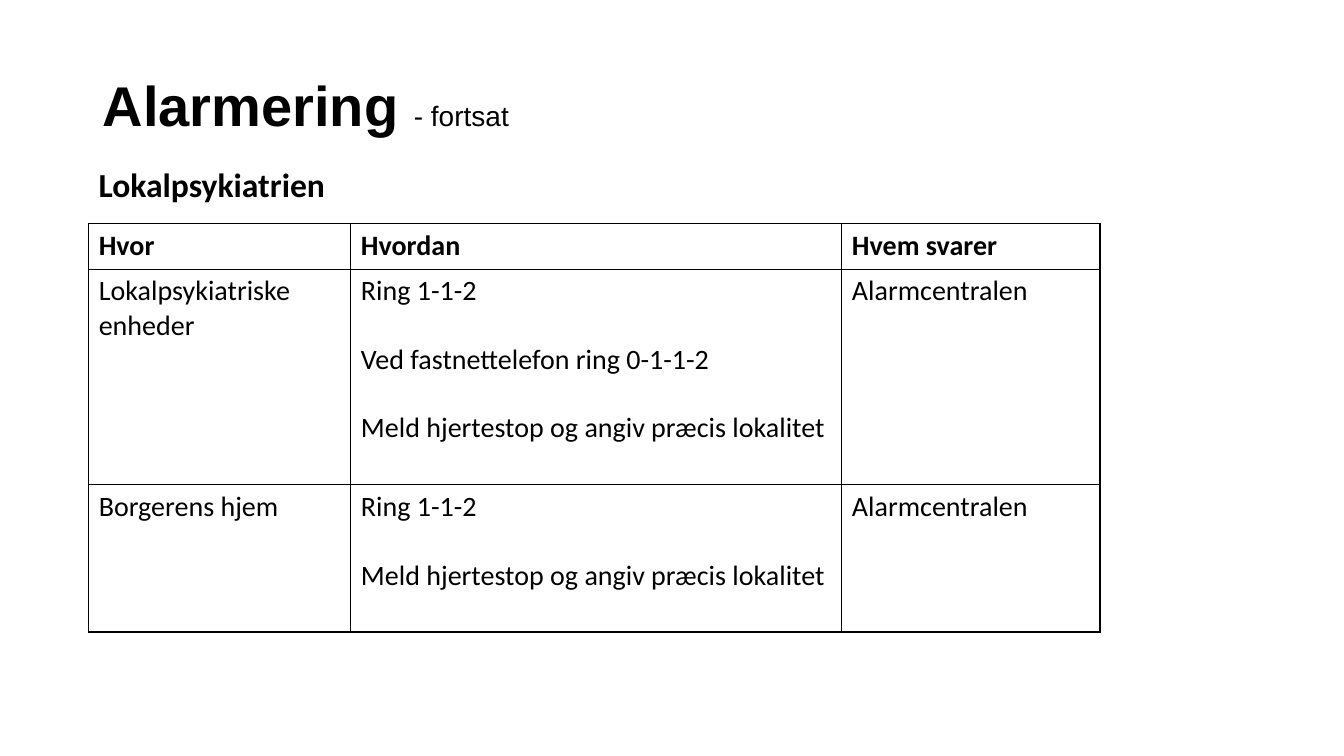
from dataclasses import dataclass

from lxml.etree import SubElement as Sub
from pptx import Presentation as Deck
from pptx.dml.color import RGBColor as Rgb
from pptx.enum.text import MSO_ANCHOR as Anchor, MSO_AUTO_SIZE as Auto, PP_ALIGN as Align
from pptx.oxml.ns import qn
from pptx.util import Inches, Pt

COLORS = {"ink": "000000", "paper": "FFFFFF"}
HEAD, BODY = "Arial", "Calibri"
GAP = 24.4  # one line of 20 pt text
WIDTHS = [2.6, 4.87, 2.56]
EDGES = ["a:lnL", "a:lnR", "a:lnT", "a:lnB"]


@dataclass
class Row:
    high: float
    cells: list[list[str]]
    bold: bool = False


ROWS = [
    Row(0.45, [["Hvor"], ["Hvordan"], ["Hvem svarer"]], True),
    Row(2.14, [
        ["Lokalpsykiatriske enheder"],
        ["Ring 1-1-2", "Ved fastnettelefon ring 0-1-1-2",
         "Meld hjertestop og angiv præcis lokalitet"],
        ["Alarmcentralen"],
    ]),
    Row(1.46, [
        ["Borgerens hjem"],
        ["Ring 1-1-2", "Meld hjertestop og angiv præcis lokalitet"],
        ["Alarmcentralen"],
    ]),
]


def add_run(para, text: str, size: float, face: str, bold: bool = False) -> None:
    run = para.add_run()
    run.text = text
    font = run.font
    font.size, font.name, font.bold = Pt(size), face, bold
    font.color.rgb = Rgb.from_string(COLORS["ink"])


def add_edges(cell) -> None:
    props = cell._tc.get_or_add_tcPr()
    for spot, edge in enumerate(EDGES):
        line = Sub(props, qn(edge), w=str(Pt(1)))
        fill = Sub(line, qn("a:solidFill"))
        Sub(fill, qn("a:srgbClr"), val=COLORS["ink"])
        props.remove(line)
        props.insert(spot, line)  # edges come before the fill


def fill_cell(cell, lines: list[str], bold: bool) -> None:
    cell.fill.solid()
    cell.fill.fore_color.rgb = Rgb.from_string(COLORS["paper"])
    add_edges(cell)
    frame = cell.text_frame
    for num, text in enumerate(lines):
        para = frame.add_paragraph() if num else frame.paragraphs[0]
        if num:
            para.space_before = Pt(GAP)
        add_run(para, text, 20, BODY, bold)


def add_title(slide) -> None:
    title = slide.shapes.title
    title.left, title.top = Inches(0.92), Inches(0.71)
    title.width, title.height = Inches(8.97), Inches(0.73)
    frame = title.text_frame
    frame.auto_size = Auto.NONE
    frame.vertical_anchor = Anchor.MIDDLE
    para = frame.paragraphs[0]
    para.alignment, para.line_spacing = Align.LEFT, 0.9
    add_run(para, "Alarmering ", 40, HEAD, True)
    add_run(para, "- fortsat", 20, HEAD)


def add_grid(slide) -> None:
    high = sum(row.high for row in ROWS)
    grid = slide.shapes.add_table(
        len(ROWS), len(WIDTHS), Inches(0.88), Inches(2.22),
        Inches(sum(WIDTHS)), Inches(high)).table
    grid.first_row = grid.horz_banding = False
    for col, wide in zip(grid.columns, WIDTHS):
        col.width = Inches(wide)
    for line, row in zip(grid.rows, ROWS):
        line.height = Inches(row.high)
        for cell, lines in zip(line.cells, row.cells):
            fill_cell(cell, lines, row.bold)


def add_label(slide) -> None:
    box = slide.shapes.add_textbox(Inches(0.88), Inches(1.58), Inches(2.48), Inches(0.5))
    frame = box.text_frame
    frame.word_wrap = False
    frame.auto_size = Auto.SHAPE_TO_FIT_TEXT
    add_run(frame.paragraphs[0], "Lokalpsykiatrien", 24, BODY, True)


def main() -> None:
    deck = Deck()
    deck.slide_width, deck.slide_height = Inches(13.33), Inches(7.5)
    slide = deck.slides.add_slide(deck.slide_layouts[5])  # title only
    add_title(slide)
    add_grid(slide)
    add_label(slide)
    deck.save("out.pptx")


if __name__ == "__main__":
    main()
